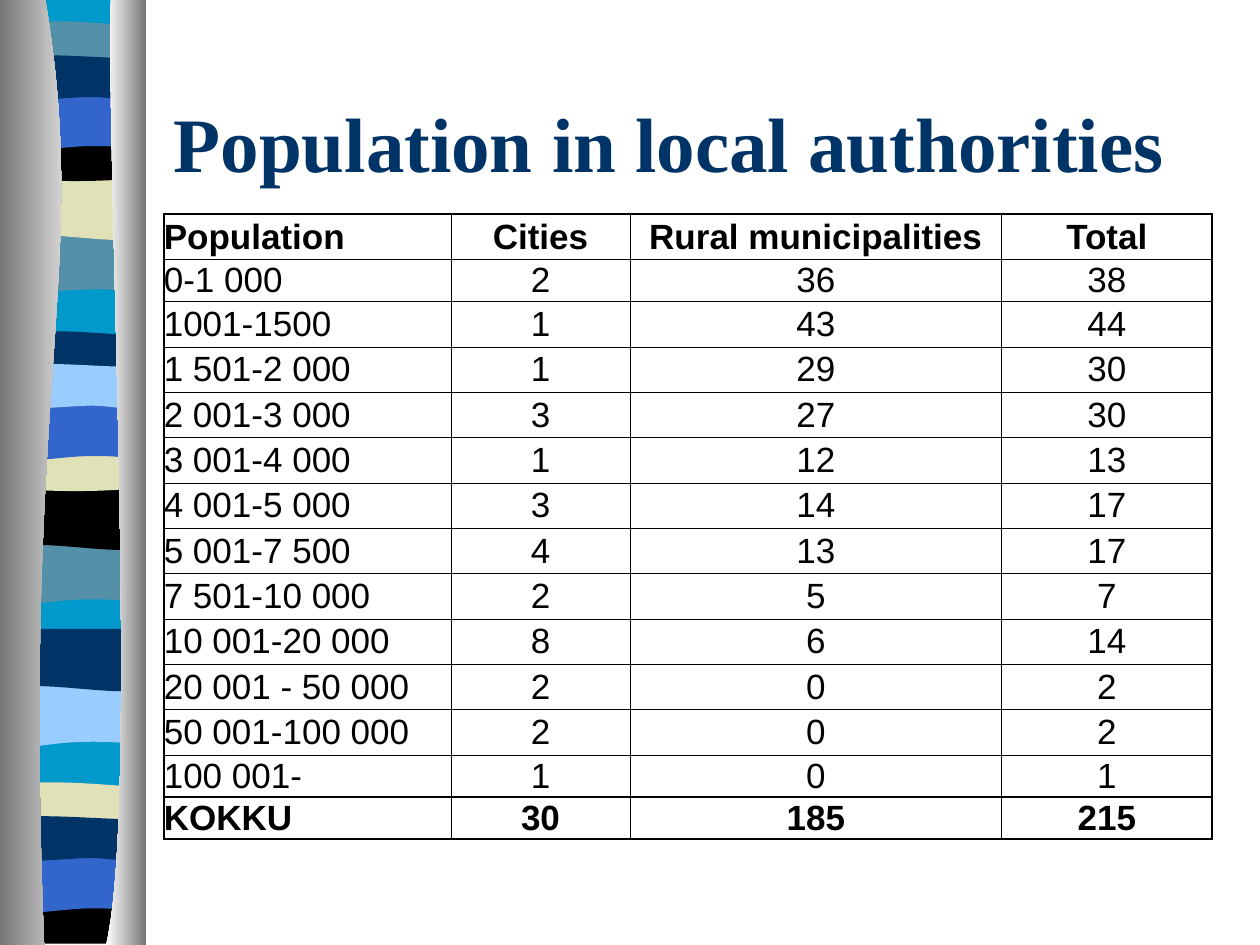
from lxml.etree import SubElement
from pptx import Presentation
from pptx.dml.color import RGBColor
from pptx.enum.text import MSO_ANCHOR as Anchor, PP_ALIGN as Align
from pptx.oxml.ns import qn
from pptx.util import Inches, Pt

CYAN = RGBColor(0x00, 0x99, 0xCC)
TEAL = RGBColor(0x54, 0x90, 0xA8)
SAND = RGBColor(0xE1, 0xE1, 0xB7)
BLACK = RGBColor(0x00, 0x00, 0x00)
BLUE = RGBColor(0x33, 0x66, 0xCC)
NAVY = RGBColor(0x00, 0x33, 0x66)
SKY = RGBColor(0x99, 0xCC, 0xFF)
GREY = RGBColor(0x76, 0x76, 0x76)
SILVER = RGBColor(0xD3, 0xD3, 0xD3)
WHITE = RGBColor(0xFF, 0xFF, 0xFF)

# Every length counts cells of a fine grid, 1000 columns by 750 rows
CELL = Inches(0.01)
COLUMNS, ROWS = 1000, 750

presentation = Presentation()
presentation.slide_width = COLUMNS * CELL
presentation.slide_height = ROWS * CELL
slide = presentation.slides.add_slide(presentation.slide_layouts[6])


def add_outline(*edges):
    """Join edges into a closed outline; two points are a line, more are Bezier curves."""
    vertices = [(x * CELL, y * CELL) for edge in edges for x, y in edge]
    builder = slide.shapes.build_freeform(*vertices[0], scale=1.0)
    builder.add_line_segments(vertices[1:], close=True)
    shape = builder.convert_to_shape()
    shape.shadow.inherit = False
    shape.line.fill.background()

    # Merge each three points after an edge's start into one curve
    outline = shape._element.find(".//" + qn("a:path"))
    nodes = list(outline)
    start = 0
    for edge in edges:
        for first in range(start + 1, start + len(edge) - 2, 3):
            bezier, *others = nodes[first:first + 3]
            bezier.tag = qn("a:cubicBezTo")
            for node in others:
                bezier.append(node[0])
                outline.remove(node)
        start += len(edge)
    return shape


# Band edges from left to right: column, and rows above or below the edge's level
LEFT, RIGHT = 5, 114
FLAT = [(LEFT, 0), (RIGHT, 0)]
RIPPLE = [(LEFT, 0), (24, 8), (39, -8), (RIGHT, 0)]
SWELL = [(LEFT, 0), (39, -6), (96, 8), (RIGHT, 0)]
SAG = [(LEFT, 0), (24, 5), (96, 5), (RIGHT, 0)]
DIP = [(LEFT, 0), (72, 5), (91, 0), (RIGHT, 0)]
ARCH = [(LEFT, 0), (22, 0), (54, -5), (72, -5), (90, -5), (97, -5), (RIGHT, 0)]
HUMP = [(LEFT, 0), (17, 5), (54, 0), (72, 0), (90, 0), (107, 5), (RIGHT, 0)]
CREST = [(LEFT, 0), (12, -5), (29, -4), (47, -4), (65, -4), (100, -1), (RIGHT, 0)]
RISE = [(LEFT, 0), (21, -5), (79, 0), (97, 0), (115, 0), (110, 0), (RIGHT, 0)]

# Coloured bands, back to front: colour, top level and edge, bottom level and edge
BANDS = [
    (CYAN, 0, FLAT, 747, FLAT),
    (TEAL, 185, FLAT, 232, RIPPLE),
    (SAND, 141, FLAT, 188, SWELL),
    (TEAL, 21, CREST, 45, SAG),
    (BLACK, 108, DIP, 140, SAG),
    (BLUE, 74, FLAT, 121, ARCH),
    (NAVY, 46, RISE, 77, HUMP),
    (TEAL, 431, FLAT, 478, RIPPLE),
    (BLACK, 386, FLAT, 434, SWELL),
    (NAVY, 267, CREST, 291, SAG),
    (SAND, 353, DIP, 386, SAG),
    (BLUE, 320, FLAT, 367, ARCH),
    (SKY, 291, RISE, 322, HUMP),
    (SKY, 544, FLAT, 591, RIPPLE),
    (NAVY, 499, FLAT, 546, SWELL),
    (SAND, 625, CREST, 650, SAG),
    (BLACK, 712, DIP, 749, FLAT),
    (BLUE, 679, FLAT, 726, ARCH),
    (NAVY, 650, RISE, 681, HUMP),
]
for colour, top, top_edge, bottom, bottom_edge in BANDS:
    upper = [(x, top + rise) for x, rise in top_edge]
    lower = [(x, bottom + rise) for x, rise in reversed(bottom_edge)]
    band = add_outline(upper, lower)
    band.fill.solid()
    band.fill.fore_color.rgb = colour

# Metallic borders either side of the bands: outer column, inner curve, shades
BORDERS = [
    (0, [(36, 0), (72, 216), (17, 296), (35, ROWS)], (GREY, WHITE)),
    (116, [(88, 0), (84, 125), (111, 646), (84, ROWS)], (WHITE, GREY)),
]
for outer, inner_curve, shades in BORDERS:
    border = add_outline(inner_curve, [(outer, ROWS), (outer, 0)])
    border.fill.gradient()
    border.fill.gradient_angle = 0
    for stop, shade in zip(border.fill.gradient_stops, shades):
        stop.color.rgb = shade

# Title
title = slide.shapes.add_textbox(128 * CELL, 50 * CELL, 850 * CELL, 125 * CELL)
title.text_frame.word_wrap = True
title.text_frame.vertical_anchor = Anchor.MIDDLE
paragraph = title.text_frame.paragraphs[0]
paragraph.text = "Population in local authorities"
paragraph.font.name = "Times New Roman"
paragraph.font.size = Pt(44)
paragraph.font.bold = True
paragraph.font.color.rgb = NAVY

# Population table
DATA = [
    ("Population", "Cities", "Rural municipalities", "Total"),
    ("0-1 000", 2, 36, 38),
    ("1001-1500", 1, 43, 44),
    ("1 501-2 000", 1, 29, 30),
    ("2 001-3 000", 3, 27, 30),
    ("3 001-4 000", 1, 12, 13),
    ("4 001-5 000", 3, 14, 17),
    ("5 001-7 500", 4, 13, 17),
    ("7 501-10 000", 2, 5, 7),
    ("10 001-20 000", 8, 6, 14),
    ("20 001 - 50 000", 2, 0, 2),
    ("50 001-100 000", 2, 0, 2),
    ("100 001-", 1, 0, 1),
    ("KOKKU", 30, 185, 215),
]
COLUMN_WIDTHS = [228, 142, 295, 167]
LAST_ROW, LAST_COLUMN = len(DATA) - 1, len(COLUMN_WIDTHS) - 1
ROW_HEIGHTS = [31 if row in (1, LAST_ROW - 1, LAST_ROW) else 36 for row in range(len(DATA))]
THICK_ROW_EDGES = {0, 7, LAST_ROW, LAST_ROW + 1}
THICK_COLUMN_EDGES = {0, LAST_COLUMN + 1}

table = slide.shapes.add_table(len(DATA), len(COLUMN_WIDTHS), 130 * CELL, 170 * CELL,
                               sum(COLUMN_WIDTHS) * CELL, sum(ROW_HEIGHTS) * CELL).table
table.first_row = table.horz_banding = False
for column, width in zip(table.columns, COLUMN_WIDTHS):
    column.width = width * CELL
for row, height in zip(table.rows, ROW_HEIGHTS):
    row.height = height * CELL

for row_index, values in enumerate(DATA):
    for column_index, value in enumerate(values):
        cell = table.cell(row_index, column_index)
        cell.margin_left = cell.margin_right = cell.margin_top = cell.margin_bottom = 0
        cell.vertical_anchor = Anchor.MIDDLE
        paragraph = cell.text_frame.paragraphs[0]
        paragraph.text = str(value)
        paragraph.alignment = Align.CENTER if column_index else Align.LEFT
        paragraph.font.name = "Arial"
        paragraph.font.size = Pt(20)
        paragraph.font.bold = row_index in (0, LAST_ROW)
        paragraph.font.color.rgb = BLACK

        # Cell borders come before the fill
        properties = cell._tc.get_or_add_tcPr()
        for side, thick in (("a:lnL", column_index in THICK_COLUMN_EDGES),
                            ("a:lnR", column_index + 1 in THICK_COLUMN_EDGES),
                            ("a:lnT", row_index in THICK_ROW_EDGES),
                            ("a:lnB", row_index + 1 in THICK_ROW_EDGES)):
            line = SubElement(properties, qn(side), w=str(Pt(1 if thick else 0.5)))
            SubElement(SubElement(line, qn("a:solidFill")), qn("a:srgbClr"), val=str(BLACK))
        cell.fill.background()

presentation.save("out.pptx")
